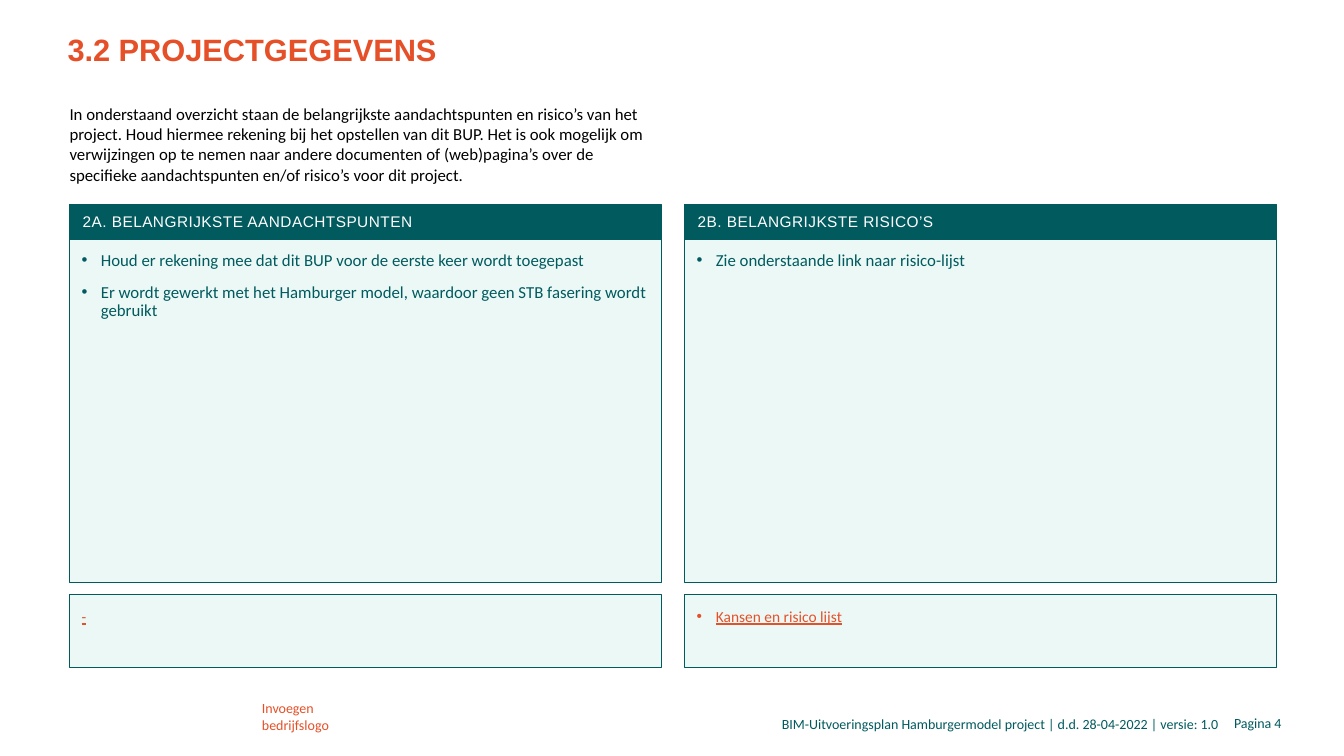
from pptx import Presentation
from pptx.dml.color import RGBColor
from pptx.enum import shapes, text
from pptx.util import Inches, Pt
from lxml import etree

COLORS = {"teal": "005A5E", "mint": "EBF8F6", "orange": "E55028",
          "white": "FFFFFF", "black": "000000"}
NS = "http://schemas.openxmlformats.org/drawingml/2006/main"
LEFT, RIGHT = text.PP_ALIGN.LEFT, text.PP_ALIGN.RIGHT
TOP, MIDDLE = text.MSO_ANCHOR.TOP, text.MSO_ANCHOR.MIDDLE
PANEL_INSETS = (0.12, 0.12, 0.08, 0.08)


def rgb(name):
    return RGBColor.from_string(COLORS[name])


def add_bullet(p):
    pPr = p._p.get_or_add_pPr()
    pPr.set("marL", str(Inches(0.19)))
    pPr.set("indent", str(-Inches(0.19)))
    font = etree.SubElement(pPr, f"{{{NS}}}buFont")
    font.set("typeface", "Arial")
    etree.SubElement(pPr, f"{{{NS}}}buChar").set("char", "•")


def write(sp, lines, size, color, font="Calibri", insets=(0.1, 0.05, 0.1, 0.05),
          anchor=TOP, align=LEFT, bullet=False, spacing=None, gap=0,
          bold=False, underline=False, tracking=0):
    tf = sp.text_frame
    tf.word_wrap = True
    tf.vertical_anchor = anchor
    (tf.margin_left, tf.margin_top,
     tf.margin_right, tf.margin_bottom) = map(Inches, insets)
    for i, line in enumerate(lines):
        p = tf.paragraphs[0] if i == 0 else tf.add_paragraph()
        if bullet:
            add_bullet(p)
        p.alignment = align
        if spacing:
            p.line_spacing = spacing
        if i and gap:
            p.space_before = Pt(gap)
        r = p.add_run()
        r.text = line
        r.font.name, r.font.size = font, Pt(size)
        r.font.color.rgb = rgb(color)
        r.font.bold, r.font.underline = bold, underline
        if tracking:
            r.font._element.set("spc", str(tracking))


def add_label(s, box, lines, size, color, **style):
    sp = s.shapes.add_textbox(*map(Inches, box))
    write(sp, lines, size, color, **style)


def add_panel(s, box, fill):
    sp = s.shapes.add_shape(shapes.MSO_SHAPE.RECTANGLE, *map(Inches, box))
    sp.shadow.inherit = False
    sp.fill.solid()
    sp.fill.fore_color.rgb = rgb(fill)
    sp.line.color.rgb = rgb("teal")
    sp.line.width = Pt(0.75)
    return sp


def add_intro(s, x, y, w):
    add_label(s, (x - 0.02, y, w, 0.47), ["3.2 PROJECTGEGEVENS"], 22, "orange",
              font="Arial", bold=True, insets=(0, 0.05, 0.1, 0.05))
    add_label(s, (x, y + 0.77, w, 0.81), [
        "In onderstaand overzicht staan de belangrijkste aandachtspunten en "
        "risico’s van het project. Houd hiermee rekening bij het opstellen van "
        "dit BUP. Het is ook mogelijk om verwijzingen op te nemen naar andere "
        "documenten of (web)pagina’s over de specifieke aandachtspunten en/of "
        "risico’s voor dit project."], 12, "black", insets=(0, 0, 0, 0))


def add_column(s, x, y, w, heading, points, reference, link_bullet):
    # Heading bar
    write(add_panel(s, (x, y, w, 0.35), "teal"), [heading], 11, "white",
          font="Arial", insets=(0.13, 0.05, 0.08, 0.05), anchor=MIDDLE,
          spacing=0.9, tracking=30)
    # Bullet list
    write(add_panel(s, (x, y + 0.35, w, 3.4), "mint"), points, 12, "teal",
          insets=PANEL_INSETS, bullet=True, spacing=0.9, gap=10)
    # Reference field
    write(add_panel(s, (x, y + 3.87, w, 0.72), "mint"), [reference], 11,
          "orange", insets=PANEL_INSETS, bullet=link_bullet, underline=True)


def add_footer(s, y):
    add_label(s, (2.5, y - 0.15, 1.14, 0.44), ["Invoegen", "bedrijfslogo"],
              10, "orange")
    add_label(s, (6.77, y + 0.01, 5.41, 0.27),
              ["BIM-Uitvoeringsplan Hamburgermodel project | d.d. 28-04-2022 "
               "| versie: 1.0"], 10, "teal", align=RIGHT)
    add_label(s, (12.07, y, 0.54, 0.27), ["Pagina"], 10, "teal",
              insets=(0, 0.05, 0, 0.05), align=RIGHT)
    add_label(s, (12.64, y, 0.41, 0.27), ["4"], 10, "teal",
              insets=(0, 0.05, 0, 0.05), anchor=MIDDLE)


def main():
    prs = Presentation()
    prs.slide_width, prs.slide_height = Inches(13.33), Inches(7.5)
    s = prs.slides.add_slide(prs.slide_layouts[6])

    left, width, pitch = 0.69, 5.87, 6.1
    add_intro(s, left, 0.26, width)
    columns = [
        ("2A. BELANGRIJKSTE AANDACHTSPUNTEN",
         ["Houd er rekening mee dat dit BUP voor de eerste keer wordt toegepast",
          "Er wordt gewerkt met het Hamburger model, waardoor geen STB fasering "
          "wordt gebruikt"], "-", False),
        ("2B. BELANGRIJKSTE RISICO’S",
         ["Zie onderstaande link naar risico-lijst"],
         "Kansen en risico lijst", True),
    ]
    for i, column in enumerate(columns):
        add_column(s, left + i * pitch, 2.03, width, *column)
    add_footer(s, 7.04)
    prs.save("out.pptx")


if __name__ == "__main__":
    main()
